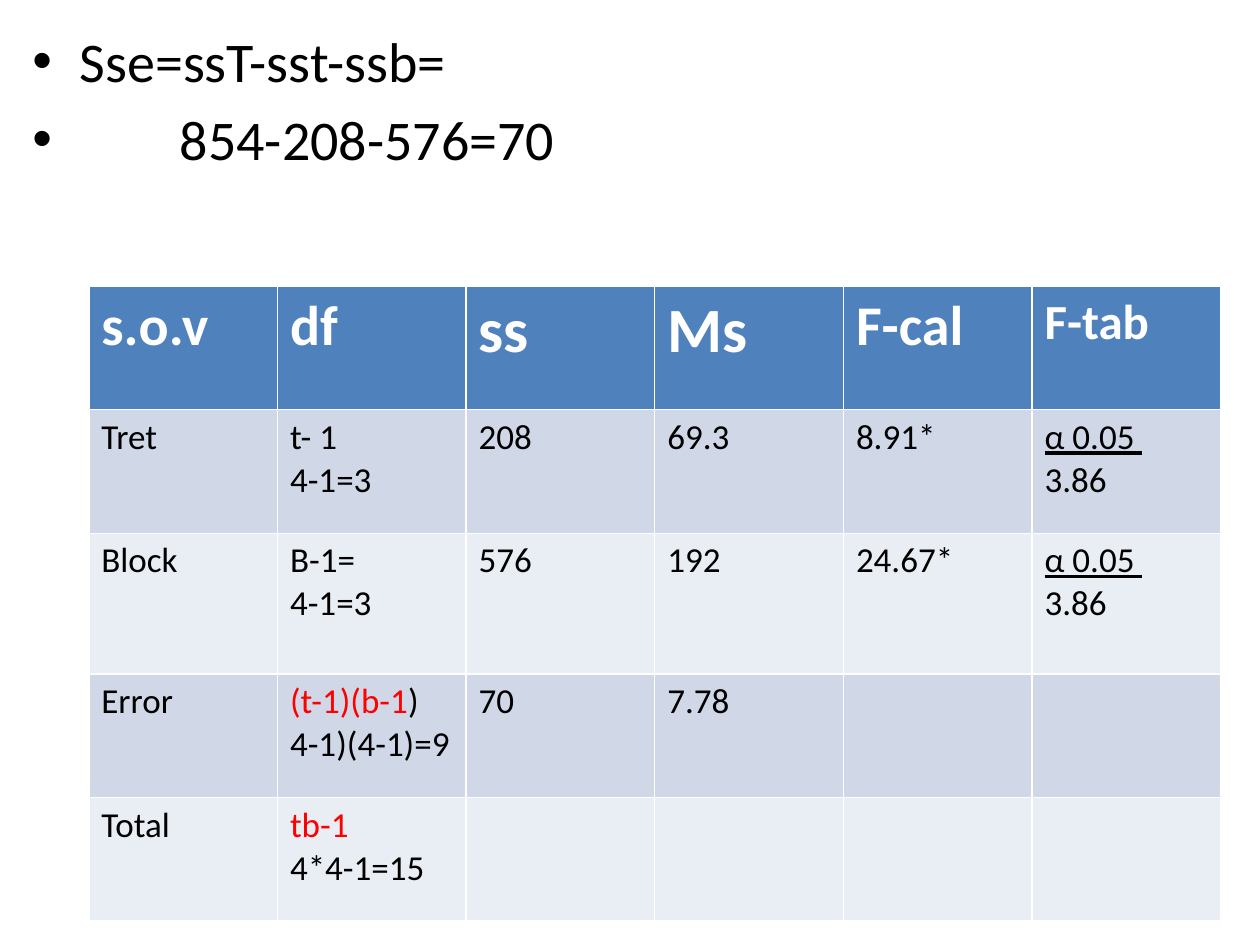
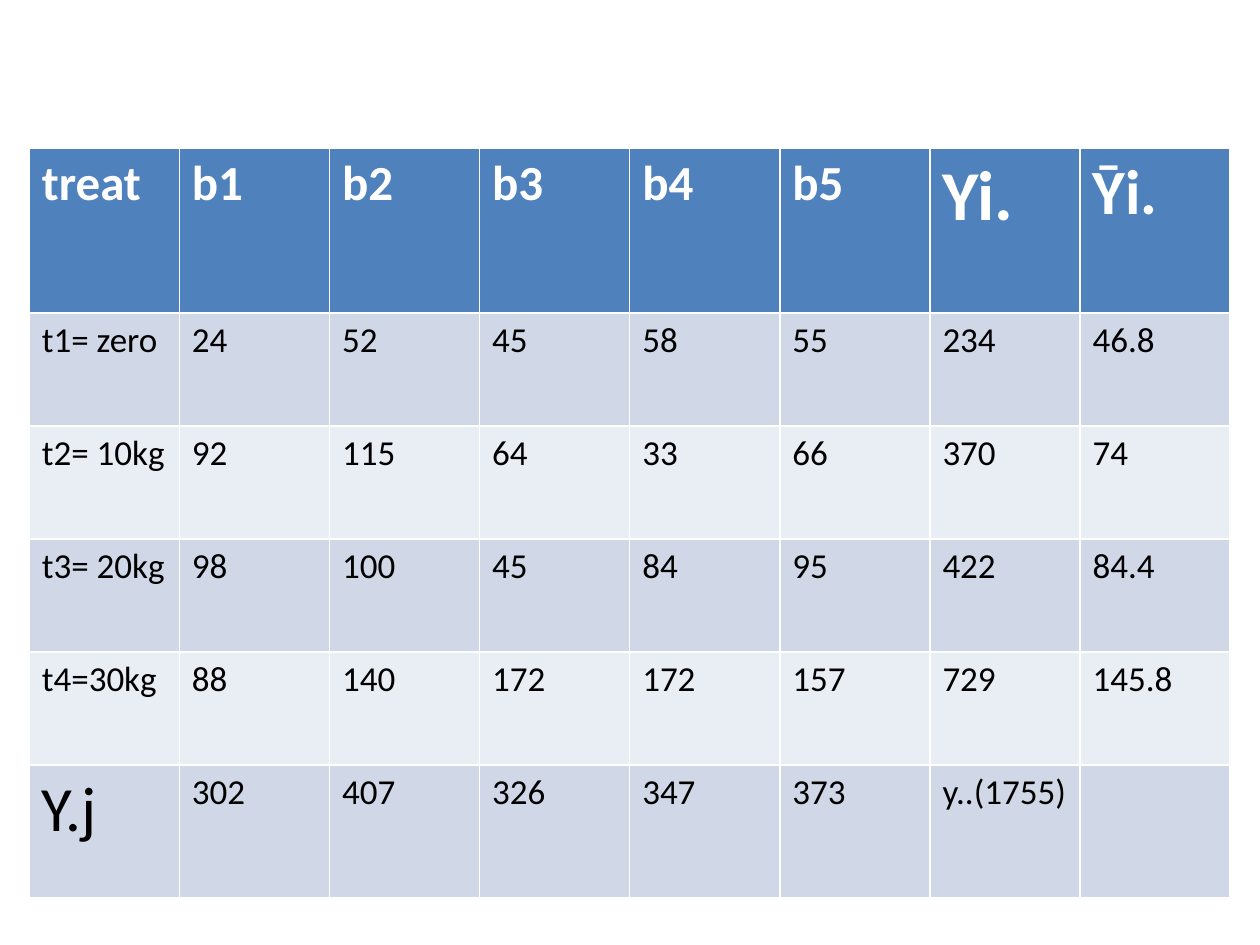
from dataclasses import dataclass
from typing import Optional, Union

from pptx import Presentation
from pptx.dml.color import RGBColor
from pptx.util import Cm, Pt

FONT = "Calibri"
WHITE = RGBColor(0xFF, 0xFF, 0xFF)
BLACK = RGBColor(0x00, 0x00, 0x00)
RED = RGBColor(0xFF, 0x00, 0x00)
BLUE = RGBColor(0x4F, 0x81, 0xBD)
BANDS = (RGBColor(0xD0, 0xD8, 0xE8), RGBColor(0xE9, 0xED, 0xF4))


@dataclass(frozen=True)
class Run:
    text: str
    size: int = 20
    color: RGBColor = BLACK
    bold: bool = False
    under: Optional[bool] = None


# A cell is plain text, or a list of lines made of runs
Cell = Union[str, list[list[Run]]]


@dataclass(frozen=True)
class Grid:
    left: float
    top: float
    width: float
    heights: list[float]
    rows: list[list[Cell]]


def head(text: str, size: int) -> Cell:
    return [[Run(text, size, WHITE, bold=True)]]


def add_run(para, item: Run) -> None:
    run = para.add_run()
    run.text = item.text
    font = run.font
    font.name = FONT
    font.size = Pt(item.size)
    font.bold = item.bold
    font.underline = item.under
    font.color.rgb = item.color


def fill_text(frame, lines: list[list[Run]]) -> None:
    for i, line in enumerate(lines):
        para = frame.add_paragraph() if i else frame.paragraphs[0]
        for item in line:
            add_run(para, item)


def add_grid(slide, grid: Grid) -> None:
    count = len(grid.rows[0])
    table = slide.shapes.add_table(
        len(grid.rows), count, Cm(grid.left), Cm(grid.top),
        Cm(grid.width), Cm(sum(grid.heights))).table
    for col in table.columns:
        col.width = Cm(grid.width / count)
    for r, (row, height) in enumerate(zip(grid.rows, grid.heights)):
        table.rows[r].height = Cm(height)
        for c, value in enumerate(row):
            cell = table.cell(r, c)
            cell.fill.solid()
            cell.fill.fore_color.rgb = BANDS[(r - 1) % 2] if r else BLUE
            if isinstance(value, str):
                value = [[Run(value)]] if value else []
            fill_text(cell.text_frame, value)


# Analysis of variance
F_TAB: Cell = [[Run("α 0.05 ", under=True)], [Run("3.86")]]
ANOVA = Grid(1.79, 5.77, 22.82, [2.49, 2.49, 2.84, 2.49, 2.49], [
    [head("s.o.v", 32), head("df", 32), head("ss", 36),
     head("Ms", 36), head("F-cal", 32), head("F-tab", 28)],
    ["Tret", [[Run("t- 1")], [Run("4-1=3")]], "208", "69.3", "8.91*", F_TAB],
    ["Block", [[Run("B-1=")], [Run("4-1=3")]], "576", "192", "24.67*", F_TAB],
    ["Error", [[Run("(t-1)(b-1", color=RED), Run(")")], [Run("4-1)(4-1)=9")]],
     "70", "7.78", "", ""],
    ["Total", [[Run("tb-1", color=RED)], [Run("4*4-1=15")]], "", "", "", ""],
])

# Yields by treatment and block
YIELDS = Grid(0.59, 2.98, 24.21, [3.33] + [2.28] * 4 + [2.68], [
    [head(text, 28) for text in ("treat", "b1", "b2", "b3", "b4", "b5")]
    + [head("Yi.", 40), head("Ῡi.", 36)],
    ["t1= zero", "24", "52", "45", "58", "55", "234", "46.8"],
    ["t2= 10kg", "92", "115", "64", "33", "66", "370", "74"],
    ["t3= 20kg", "98", "100", "45", "84", "95", "422", "84.4"],
    ["t4=30kg", "88", "140", "172", "172", "157", "729", "145.8"],
    [[[Run("Y.j", 36)]], "302", "407", "326", "347", "373", "y..(1755)", ""],
])


def add_sums(slide) -> None:
    body = slide.placeholders[1]
    body.left, body.top = Cm(0.4), Cm(0.4)
    body.width, body.height = Cm(24.4), Cm(18.06)
    frame = body.text_frame
    fill_text(frame, [[Run("Sse=ssT-sst-ssb=", 32)],
                      [Run("854-208-576=70", 32)]])
    # Push the second line in, leaving its bullet at the edge
    props = frame.paragraphs[1]._p.get_or_add_pPr()
    props.set("marL", str(Cm(2.97)))
    props.set("indent", str(-Cm(2.97)))


def main() -> None:
    deck = Presentation()
    deck.slide_width, deck.slide_height = Cm(25.4), Cm(19.05)

    # Slide 1: error sum of squares and its table
    slide = deck.slides.add_slide(deck.slide_layouts[1])
    title = slide.shapes.title.element
    title.getparent().remove(title)
    add_sums(slide)
    add_grid(slide, ANOVA)

    # Slide 2: yields
    slide = deck.slides.add_slide(deck.slide_layouts[6])
    add_grid(slide, YIELDS)

    deck.save("out.pptx")


if __name__ == "__main__":
    main()
